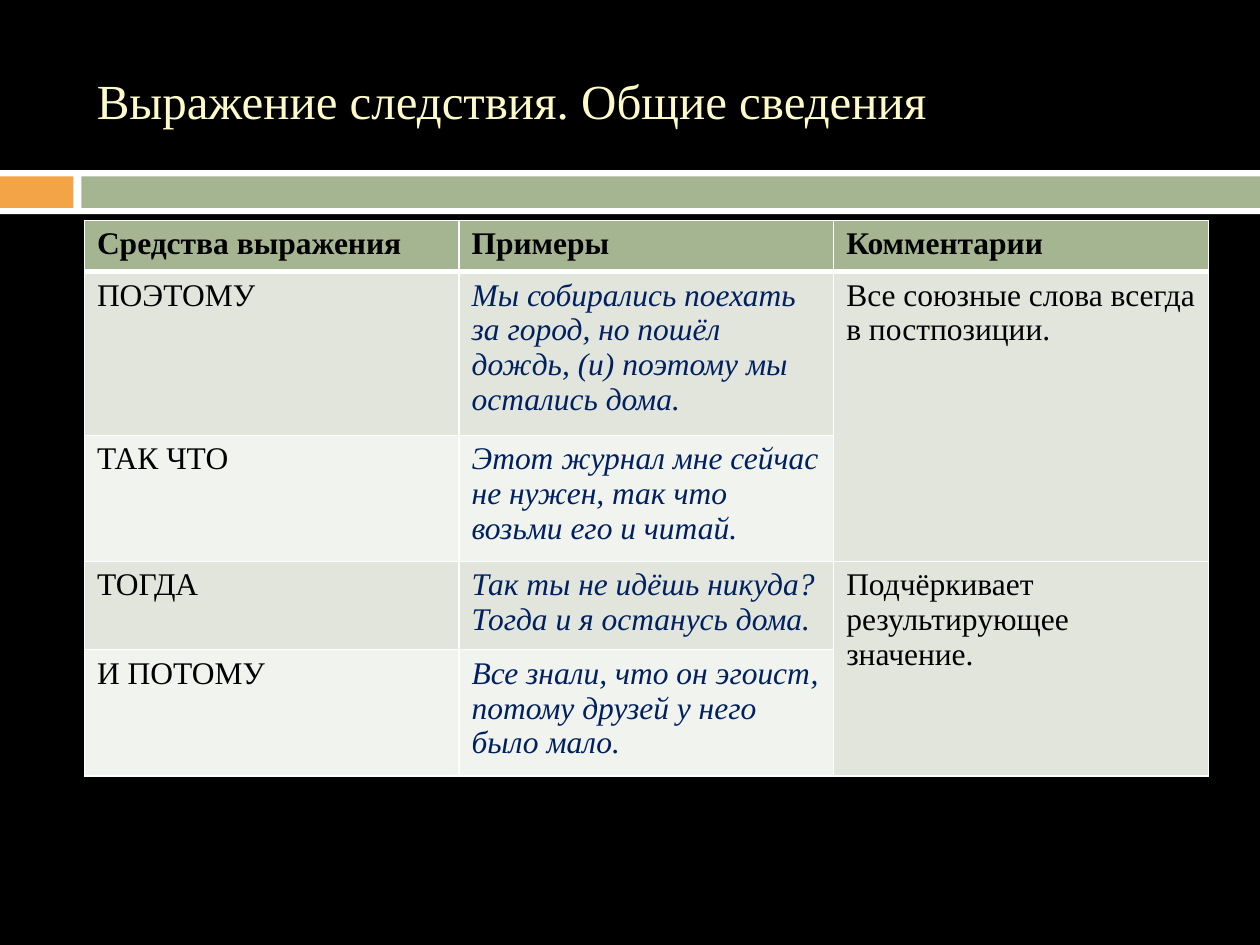
from lxml.etree import SubElement
from pptx import Presentation
from pptx.dml.color import RGBColor
from pptx.enum.shapes import MSO_SHAPE
from pptx.enum.text import MSO_ANCHOR
from pptx.oxml.ns import qn
from pptx.util import Pt

BLACK = RGBColor(0x00, 0x00, 0x00)
WHITE = RGBColor(0xFF, 0xFF, 0xFF)
ORANGE = RGBColor(0xF3, 0xA4, 0x47)
GREEN = RGBColor(0xA5, 0xB5, 0x92)
CREAM = RGBColor(0xFE, 0xFA, 0xC9)
NAVY = RGBColor(0x00, 0x20, 0x60)
DARK_BAND = RGBColor(0xE1, 0xE5, 0xDC)
LIGHT_BAND = RGBColor(0xF0, 0xF3, 0xEE)

FONT = "Times New Roman"
LEFT, WIDTH = 48.24, 642.24
ROW_HEIGHTS = [29.2, 86.9, 67.4, 46.9, 67.4]
EXAMPLES_COLUMN, COMMENTS_COLUMN = 1, 2
ROWS = [
    ("Средства выражения", "Примеры", "Комментарии"),
    ("ПОЭТОМУ",
     "Мы собирались поехать за город, но пошёл дождь, (и) поэтому мы остались дома.",
     "Все союзные слова всегда в постпозиции."),
    ("ТАК ЧТО", "Этот журнал мне сейчас не нужен, так что возьми его и читай.", ""),
    ("ТОГДА", "Так ты не идёшь никуда? Тогда и я останусь дома.",
     "Подчёркивает результирующее значение."),
    ("И ПОТОМУ", "Все знали, что он эгоист, потому друзей у него было мало.", ""),
]


def add_bar(slide, left, top, width, height, color):
    bar = slide.shapes.add_shape(
        MSO_SHAPE.RECTANGLE, Pt(left), Pt(top), Pt(width), Pt(height))
    bar.shadow.inherit = False
    bar.fill.solid()
    bar.fill.fore_color.rgb = color
    bar.line.fill.background()


def write(text_frame, text, size, color, bold=False, italic=False):
    text_frame.text = text
    for run in text_frame.paragraphs[0].runs:
        run.font.name = FONT
        run.font.size = Pt(size)
        run.font.color.rgb = color
        run.font.bold = bold
        run.font.italic = italic


def add_title(slide, text):
    title = slide.shapes.add_textbox(Pt(LEFT), Pt(18), Pt(WIDTH), Pt(78))
    title.text_frame.word_wrap = True
    title.text_frame.vertical_anchor = MSO_ANCHOR.MIDDLE
    write(title.text_frame, text, 28, CREAM)


def set_borders(cell, bottom_width):
    properties = cell._tc.get_or_add_tcPr()
    for side, width in (("L", 1), ("R", 1), ("T", 1), ("B", bottom_width)):
        border = SubElement(properties, qn(f"a:ln{side}"), w=str(Pt(width)))
        fill = SubElement(border, qn("a:solidFill"))
        SubElement(fill, qn("a:srgbClr"), val=str(WHITE))


def format_cell(cell, text, row, column):
    is_header = row == 0
    is_example = column == EXAMPLES_COLUMN and not is_header
    set_borders(cell, 3 if is_header else 1)
    cell.fill.solid()
    if is_header:
        cell.fill.fore_color.rgb = GREEN
    elif column == COMMENTS_COLUMN or row % 2:
        cell.fill.fore_color.rgb = DARK_BAND
    else:
        cell.fill.fore_color.rgb = LIGHT_BAND
    if text:
        write(cell.text_frame, text, 18, NAVY if is_example else BLACK,
              bold=is_header, italic=is_example)


def add_expressions_table(slide):
    table = slide.shapes.add_table(
        len(ROWS), len(ROWS[0]), Pt(LEFT), Pt(126), Pt(WIDTH),
        Pt(sum(ROW_HEIGHTS))).table
    for table_row, height in zip(table.rows, ROW_HEIGHTS):
        table_row.height = Pt(height)
    for row, texts in enumerate(ROWS):
        for column, text in enumerate(texts):
            format_cell(table.cell(row, column), text, row, column)
    for row in (1, 3):
        table.cell(row, COMMENTS_COLUMN).merge(table.cell(row + 1, COMMENTS_COLUMN))


def main():
    presentation = Presentation()
    presentation.slide_width = Pt(720)
    presentation.slide_height = Pt(540)
    slide = presentation.slides.add_slide(presentation.slide_layouts[6])
    slide.background.fill.solid()
    slide.background.fill.fore_color.rgb = BLACK
    add_bar(slide, 0, 97.2, 720, 25.2, WHITE)
    add_bar(slide, 0, 100.8, 42, 18, ORANGE)
    add_bar(slide, 46.5, 100.8, 673.5, 18, GREEN)
    add_title(slide, "Выражение следствия. Общие сведения")
    add_expressions_table(slide)
    presentation.save("out.pptx")


if __name__ == "__main__":
    main()
